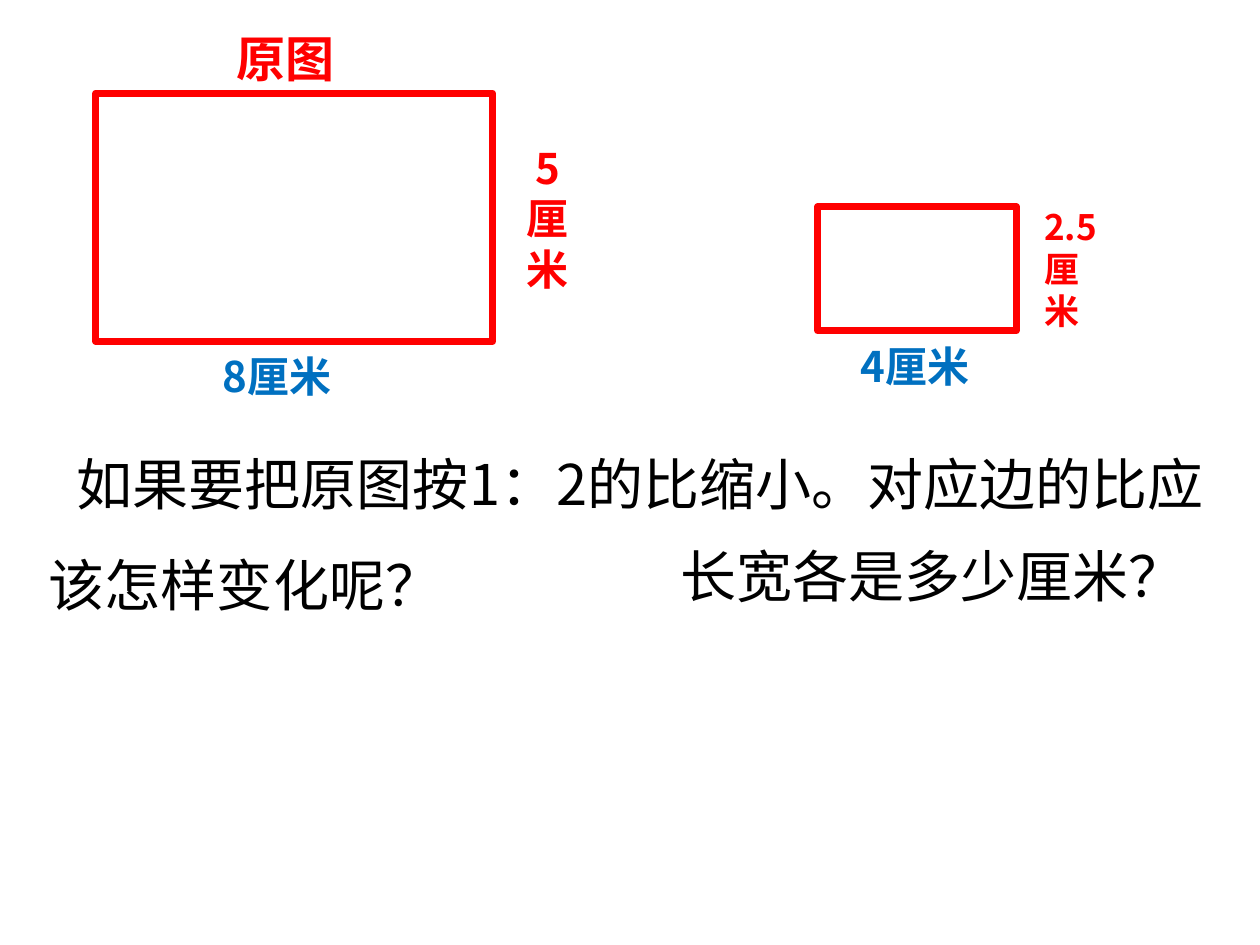
from lxml import etree
from pptx import Presentation
from pptx import util as u
from pptx.dml.color import RGBColor
from pptx.enum import shapes, text
from pptx.oxml.ns import qn

COLORS = {"red": "FF0000", "blue": "0070C0", "black": "000000", "white": "FFFFFF"}
FONT = "Noto Sans CJK SC"
ORIGINAL_SIZE = (3.15, 1.97)
RECTANGLES = [
    {"left": 0.76, "top": 0.74, "scale": 1},
    {"left": 6.49, "top": 1.64, "scale": 0.5},
]
LABELS = [
    (["原图"], (1.78, 0.18, 1.11, 0.57), {"size": 28, "color": "red"}),
    (["8厘米"], (1.67, 2.73, 1.97, 0.5), {"color": "blue"}),
    (["5", "厘", "米"], (4.08, 1.08, 0.77, 1.3), {"color": "red", "indent": 0.07}),
    (["4厘米"], (6.73, 2.65, 2.76, 0.5), {"color": "blue"}),
    (["2.5", "厘", "米"], (8.19, 1.58, 1.06, 1.1), {"size": 20, "color": "red"}),
]
QUESTIONS = [
    (["如果要把原图按1：2的比缩小。对应边的比应该怎样变化呢？"], (0.29, 3.25, 9.42, 1.7),
     {"indent": 0.22, "line_spacing": 1.5}),
    (["长宽各是多少厘米？"], (5.3, 4.25, 4.31, 0.93), {"latin": "Times New Roman"}),
]


def rgb(name):
    return RGBColor.from_string(COLORS[name])


def add_text(slide, lines, box, size=24, color="black", bold=False, latin=FONT,
             indent=0, line_spacing=None):
    shape = slide.shapes.add_textbox(*map(u.Inches, box))
    frame = shape.text_frame
    frame.word_wrap = True
    frame.auto_size = text.MSO_AUTO_SIZE.SHAPE_TO_FIT_TEXT
    frame.text = "\n".join(lines)
    for paragraph in frame.paragraphs:
        if line_spacing:
            paragraph.line_spacing = line_spacing
        for run in paragraph.runs:
            run.font.size = u.Pt(size)
            run.font.bold = bold
            run.font.name = latin
            run.font.color.rgb = rgb(color)
            east_asian = etree.SubElement(run.font._element, qn("a:ea"))
            east_asian.set("typeface", FONT)
    if indent:
        properties = frame.paragraphs[0]._p.get_or_add_pPr()
        properties.set("indent", str(u.Inches(indent)))


def add_rectangle(slide, left, top, scale):
    width, height = (u.Inches(side * scale) for side in ORIGINAL_SIZE)
    shape = slide.shapes.add_shape(
        shapes.MSO_SHAPE.RECTANGLE, u.Inches(left), u.Inches(top), width, height)
    shape.shadow.inherit = False
    shape.fill.solid()
    shape.fill.fore_color.rgb = rgb("white")
    fill_color = shape._element.spPr.find(qn("a:solidFill")).find(qn("a:srgbClr"))
    etree.SubElement(fill_color, qn("a:alpha")).set("val", "45000")
    shape.line.color.rgb = rgb("red")
    shape.line.width = u.Pt(4)


def main():
    presentation = Presentation()
    presentation.slide_width = u.Inches(10)
    presentation.slide_height = u.Inches(7.5)
    slide = presentation.slides.add_slide(presentation.slide_layouts[6])
    for rectangle in RECTANGLES:
        add_rectangle(slide, **rectangle)
    for lines, box, style in LABELS:
        add_text(slide, lines, box, bold=True, **style)
    for lines, box, style in QUESTIONS:
        add_text(slide, lines, box, size=32, **style)
    presentation.save("out.pptx")


if __name__ == "__main__":
    main()
